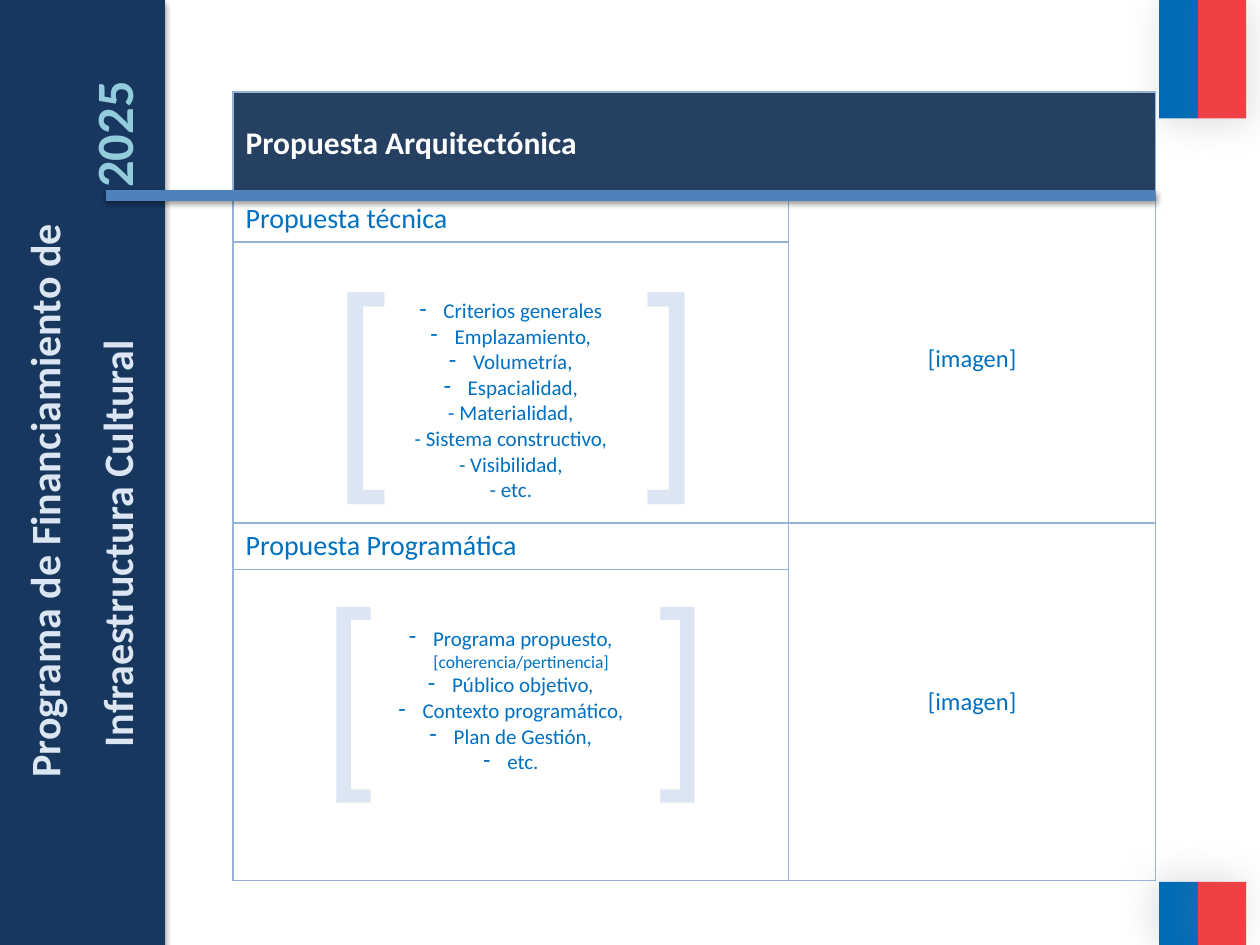
from lxml import etree
from pptx import Presentation
from pptx.dml.color import RGBColor
from pptx.enum.shapes import MSO_CONNECTOR, MSO_SHAPE
from pptx.enum.text import MSO_ANCHOR, MSO_AUTO_SIZE, PP_ALIGN
from pptx.oxml.ns import qn
from pptx.util import Inches, Pt

NAVY = RGBColor(0x17, 0x37, 0x5E)
HEADER = RGBColor(0x25, 0x40, 0x61)
WHITE = RGBColor(0xFF, 0xFF, 0xFF)
TEXT_BLUE = RGBColor(0x00, 0x70, 0xC0)
RULE_BLUE = RGBColor(0x4F, 0x81, 0xBD)
BORDER = RGBColor(0x95, 0xB3, 0xD7)
PALE = RGBColor(0xDC, 0xE6, 0xF2)
AQUA = RGBColor(0x93, 0xCD, 0xDD)
FLAG_BLUE = RGBColor(0x00, 0x6C, 0xB7)
FLAG_RED = RGBColor(0xEF, 0x41, 0x44)
BLACK = RGBColor(0x00, 0x00, 0x00)
GRAY = RGBColor(0x80, 0x80, 0x80)

BULLET, PLAIN, NOTE = "bullet", "plain", "note"
TECHNICAL = [
    ("Criterios generales", BULLET),
    ("Emplazamiento,", BULLET),
    ("Volumetría,", BULLET),
    ("Espacialidad,", BULLET),
    ("- Materialidad,", PLAIN),
    ("- Sistema constructivo,", PLAIN),
    ("- Visibilidad,", PLAIN),
    ("- etc.", PLAIN),
]
PROGRAMME = [
    ("Programa propuesto,", BULLET),
    ("[coherencia/pertinencia]", NOTE),
    ("Público objetivo,", BULLET),
    ("Contexto programático,", BULLET),
    ("Plan de Gestión,", BULLET),
    ("etc.", BULLET),
]


def add_color(parent, color, alpha=None):
    node = etree.SubElement(parent, qn("a:srgbClr"), val=str(color))
    if alpha is not None:
        etree.SubElement(node, qn("a:alpha"), val=str(alpha * 1000))


class SlideBuilder:
    font = "Calibri"

    def __init__(self, slide):
        self.slide = slide
        self.shapes = slide.shapes

    def shadow(self, shape, color, alpha, blur, distance, angle):
        effects = shape._element.spPr.get_or_add_effectLst() if hasattr(
            shape._element.spPr, "get_or_add_effectLst") else etree.SubElement(
            shape._element.spPr, qn("a:effectLst"))
        outer = etree.SubElement(
            effects, qn("a:outerShdw"), blurRad=str(Pt(blur)),
            dist=str(Pt(distance)), dir=str(angle * 60000), rotWithShape="0")
        add_color(outer, color, alpha)

    def block(self, left, top, width, height, color, shadow):
        shape = self.shapes.add_shape(
            MSO_SHAPE.RECTANGLE, Inches(left), Inches(top), Inches(width), Inches(height))
        shape.fill.solid()
        shape.fill.fore_color.rgb = color
        shape.line.fill.background()
        self.shadow(shape, *shadow)

    def rule(self, x1, x2, y):
        line = self.shapes.add_connector(
            MSO_CONNECTOR.STRAIGHT, Inches(x1), Inches(y), Inches(x2), Inches(y))
        line.line.color.rgb = RULE_BLUE
        line.line.width = Pt(6)
        self.shadow(line, BLACK, 38, 3.1, 1.6, 90)

    def format(self, paragraph, size, color, bold=False, align=PP_ALIGN.LEFT, font=None):
        paragraph.alignment = align
        paragraph.font.name = font or self.font
        paragraph.font.size = Pt(size)
        paragraph.font.bold = bold
        paragraph.font.color.rgb = color

    def tab_stop(self, paragraph, position):
        stops = etree.Element(qn("a:tabLst"))
        etree.SubElement(stops, qn("a:tab"), pos=str(Inches(position)), algn="l")
        paragraph._p.get_or_add_pPr().insert(0, stops)

    def text_box(self, left, top, width, height):
        box = self.shapes.add_textbox(
            Inches(left), Inches(top), Inches(width), Inches(height))
        box.text_frame.word_wrap = True
        return box

    def brackets(self, left, top, width, height, size, gap):
        paragraph = self.text_box(left, top, width, height).text_frame.paragraphs[0]
        paragraph.text = "[\t]"
        self.format(paragraph, size, PALE, font="Arial Narrow")
        self.tab_stop(paragraph, gap)

    def side_title(self, text):
        title = self.shapes.title
        self.shapes._spTree.append(title._element)  # in front of the side band
        title.left, title.top = Inches(-3.14), Inches(3.69)
        title.width, title.height = Inches(7.04), Inches(0.57)
        title.rotation = 270
        frame = title.text_frame
        frame.text = text
        frame.auto_size = MSO_AUTO_SIZE.NONE
        frame.vertical_anchor = MSO_ANCHOR.TOP
        self.format(frame.paragraphs[0], 24, PALE, True, PP_ALIGN.CENTER)

    def side_subtitle(self, text, year):
        box = self.text_box(-2.62, 3.68, 7.03, 0.61)
        box.rotation = 270
        box.text_frame.margin_left = Inches(1.57)
        paragraph = box.text_frame.paragraphs[0]
        self.format(paragraph, 24, PALE, True)
        self.tab_stop(paragraph, 4.44)
        paragraph.add_run().text = text + "\t"
        year_run = paragraph.add_run()
        year_run.text = year
        year_run.font.size = Pt(30)
        year_run.font.color.rgb = AQUA

    def table(self, left, top, widths, heights):
        table = self.shapes.add_table(
            len(heights), len(widths), Inches(left), Inches(top),
            Inches(sum(widths)), Inches(sum(heights))).table
        table.first_row = table.horz_banding = False
        for column, width in zip(table.columns, widths):
            column.width = Inches(width)
        for row, height in zip(table.rows, heights):
            row.height = Inches(height)
        for cell in table.iter_cells():
            cell.fill.background()
            self.borders(cell)
        return table

    def borders(self, cell):
        properties = cell._tc.get_or_add_tcPr()
        for index, side in enumerate(("lnL", "lnR", "lnT", "lnB")):
            line = etree.Element(qn(f"a:{side}"), w=str(Pt(1)))
            add_color(etree.SubElement(line, qn("a:solidFill")), BORDER)
            properties.insert(index, line)

    def cell_text(self, cell, text, size, color=TEXT_BLUE, **style):
        cell.text = text
        self.format(cell.text_frame.paragraphs[0], size, color, **style)

    def cell_list(self, cell, items):
        cell.margin_top = Inches(0.45)
        frame = cell.text_frame
        for index, (text, kind) in enumerate(items):
            paragraph = frame.add_paragraph() if index else frame.paragraphs[0]
            paragraph.text = text
            self.format(paragraph, 10 if kind == NOTE else 12, TEXT_BLUE,
                        align=PP_ALIGN.CENTER)
            properties = paragraph._p.get_or_add_pPr()
            if kind == NOTE:
                properties.set("marL", str(Inches(0.16)))
            elif kind == BULLET:
                properties.set("marL", str(Inches(0.19)))
                properties.set("indent", str(Inches(-0.19)))
                properties.insert(0, etree.Element(qn("a:buChar"), char="-"))


def main():
    deck = Presentation()
    deck.slide_width, deck.slide_height = Inches(10), Inches(7.5)
    page = SlideBuilder(deck.slides.add_slide(deck.slide_layouts[5]))

    for top, height, angle in ((0, 0.94, 45), (7, 0.5, 215)):
        for left, width, color in ((9.2, 0.31, FLAG_BLUE), (9.51, 0.38, FLAG_RED)):
            page.block(left, top, width, height, color, (GRAY, 25, 20, 3, angle))

    page.brackets(2.56, 1.78, 3.7, 2.29, 130, 2.47)
    page.brackets(2.48, 4.31, 3.46, 2.12, 120, 2.66)
    page.block(0, 0, 1.31, 7.5, NAVY, (BLACK, 35, 3.1, 1.8, 90))

    table = page.table(1.85, 0.73, [4.41, 2.91], [0.82, 0.37, 2.23, 0.37, 2.47])
    header = table.cell(0, 0)
    header.merge(table.cell(0, 1))
    header.fill.solid()
    header.fill.fore_color.rgb = HEADER
    header.vertical_anchor = MSO_ANCHOR.MIDDLE
    page.cell_text(header, "Propuesta Arquitectónica", 18, WHITE, bold=True)

    sections = ((1, "Propuesta técnica", TECHNICAL), (3, "Propuesta Programática", PROGRAMME))
    for row, heading, items in sections:
        page.cell_text(table.cell(row, 0), heading, 16)
        page.cell_list(table.cell(row + 1, 0), items)
        image_cell = table.cell(row, 1)
        image_cell.merge(table.cell(row + 1, 1))
        image_cell.vertical_anchor = MSO_ANCHOR.MIDDLE
        page.cell_text(image_cell, "[imagen]", 14, align=PP_ALIGN.CENTER)

    page.rule(9.17, 0.84, 1.55)
    page.side_title("Programa de Financiamiento de")
    page.side_subtitle("Infraestructura Cultural", "2025")
    deck.save("out.pptx")


if __name__ == "__main__":
    main()
